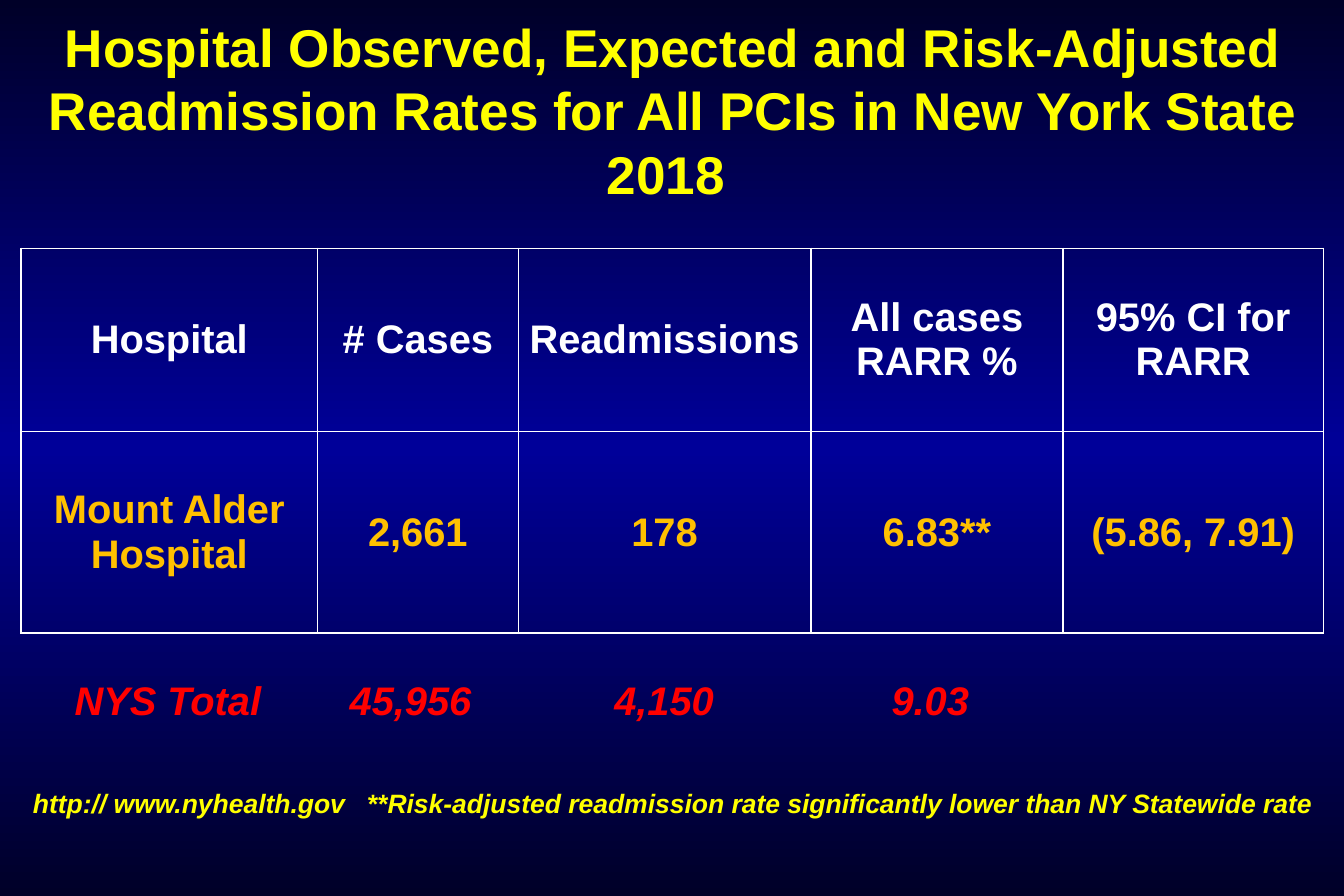
from copy import deepcopy

from lxml import etree
from pptx import Presentation
from pptx.dml.color import RGBColor
from pptx.enum.text import MSO_ANCHOR as Anchor, MSO_AUTO_SIZE as AutoSize, PP_ALIGN as Align
from pptx.oxml.ns import qn
from pptx.util import Cm, Pt

YELLOW, WHITE, GOLD, RED = "FFFF00", "FFFFFF", "FFC000", "FF0000"
NAVY, BLUE = "000028", "000099"

ROWS = [
    ["Hospital", "# Cases", "Readmissions", "All cases RARR %", "95% CI for RARR"],
    ["Mount Alder Hospital", "2,661", "178", "6.83**", "(5.86, 7.91)"],
]
COLUMN_WIDTHS = [6.3, 4.27, 6.22, 5.36, 5.54]
ROW_HEIGHTS = [3.89, 4.29]
TOTALS = ["NYS Total", "45,956", "4,150", "9.03"]
TOTAL_TABS = [2.92, 8.08, 13.47, 19.13]


def color(value):
    return RGBColor.from_string(value)


def format_para(para, size, hue, italic=False, align=Align.CENTER):
    para.alignment = align
    for span in para.runs:
        font = span.font
        font.name, font.size = "Arial", Pt(size)
        font.bold, font.italic = True, italic
        font.color.rgb = color(hue)


def prepare_frame(frame, side=0.2):
    frame.word_wrap = True
    frame.auto_size = AutoSize.NONE
    frame.vertical_anchor = Anchor.TOP
    frame.margin_left = frame.margin_right = Cm(side)
    frame.margin_top = frame.margin_bottom = Cm(0.1)


def paint_background(page):
    fill = page.background.fill
    fill.gradient()
    fill.gradient_angle = 90
    stops = page.element.find(".//" + qn("a:gsLst"))
    stops.append(deepcopy(stops[0]))
    for stop, place, hue in zip(fill.gradient_stops, (0, 0.5, 1), (NAVY, BLUE, NAVY)):
        stop.position = place
        stop.color.rgb = color(hue)


def add_title(page, left, top, width, height):
    title = page.shapes.title
    title.left, title.top, title.width, title.height = map(Cm, (left, top, width, height))
    prepare_frame(title.text_frame)
    title.text_frame.text = ("Hospital Observed, Expected and Risk-Adjusted "
                             "Readmission Rates for All PCIs in New York State 2018 ")
    format_para(title.text_frame.paragraphs[0], 32, YELLOW)


def draw_borders(cell):
    properties = cell._tc.get_or_add_tcPr()
    for index, side in enumerate(("lnL", "lnR", "lnT", "lnB")):
        line = etree.Element(qn("a:" + side), w=str(Pt(1)))
        solid = etree.SubElement(line, qn("a:solidFill"))
        etree.SubElement(solid, qn("a:srgbClr"), val=WHITE)
        properties.insert(index, line)


def add_rates_table(page, left, top):
    frame = page.shapes.add_table(
        len(ROWS), len(COLUMN_WIDTHS), Cm(left), Cm(top),
        Cm(sum(COLUMN_WIDTHS)), Cm(sum(ROW_HEIGHTS)))
    table = frame.table
    table.first_row = table.horz_banding = False
    for column, width in zip(table.columns, COLUMN_WIDTHS):
        column.width = Cm(width)
    for row, height, texts, hue in zip(table.rows, ROW_HEIGHTS, ROWS, (WHITE, GOLD)):
        row.height = Cm(height)
        for cell, text in zip(row.cells, texts):
            cell.text = text
            cell.vertical_anchor = Anchor.MIDDLE
            cell.margin_left = cell.margin_right = Cm(0.23)
            cell.margin_top = cell.margin_bottom = Cm(0.1)
            cell.fill.background()
            draw_borders(cell)
            format_para(cell.text_frame.paragraphs[0], 24, hue)


def add_totals(page, left, top, width, height):
    box = page.shapes.add_textbox(Cm(left), Cm(top), Cm(width), Cm(height))
    prepare_frame(box.text_frame)
    para = box.text_frame.paragraphs[0]
    para.text = "".join("\t" + total for total in TOTALS)
    # Centred tab stops under the columns
    tabs = etree.SubElement(para._p.get_or_add_pPr(), qn("a:tabLst"))
    for place in TOTAL_TABS:
        etree.SubElement(tabs, qn("a:tab"), pos=str(Cm(place)), algn="ctr")
    format_para(para, 24, RED, italic=True, align=Align.LEFT)


def add_footnote(page, left, top, width, height):
    box = page.shapes.add_textbox(Cm(left), Cm(top), Cm(width), Cm(height))
    prepare_frame(box.text_frame, side=0.25)
    para = box.text_frame.paragraphs[0]
    para.text = ("http:// www.nyhealth.gov   **Risk-adjusted readmission rate "
                 "significantly lower than NY Statewide rate ")
    format_para(para, 16, YELLOW, italic=True)


def main():
    deck = Presentation()
    deck.slide_width, deck.slide_height = Cm(28.575), Cm(19.05)
    page = deck.slides.add_slide(deck.slide_layouts.get_by_name("Title Only"))
    paint_background(page)
    add_title(page, 0.03, 0.2, 28.57, 4.32)
    add_rates_table(page, 0.45, 5.28)
    add_totals(page, 0.45, 14.27, 25, 1.24)
    add_footnote(page, -0.15, 16.64, 29.08, 0.94)
    deck.save("out.pptx")


if __name__ == "__main__":
    main()
